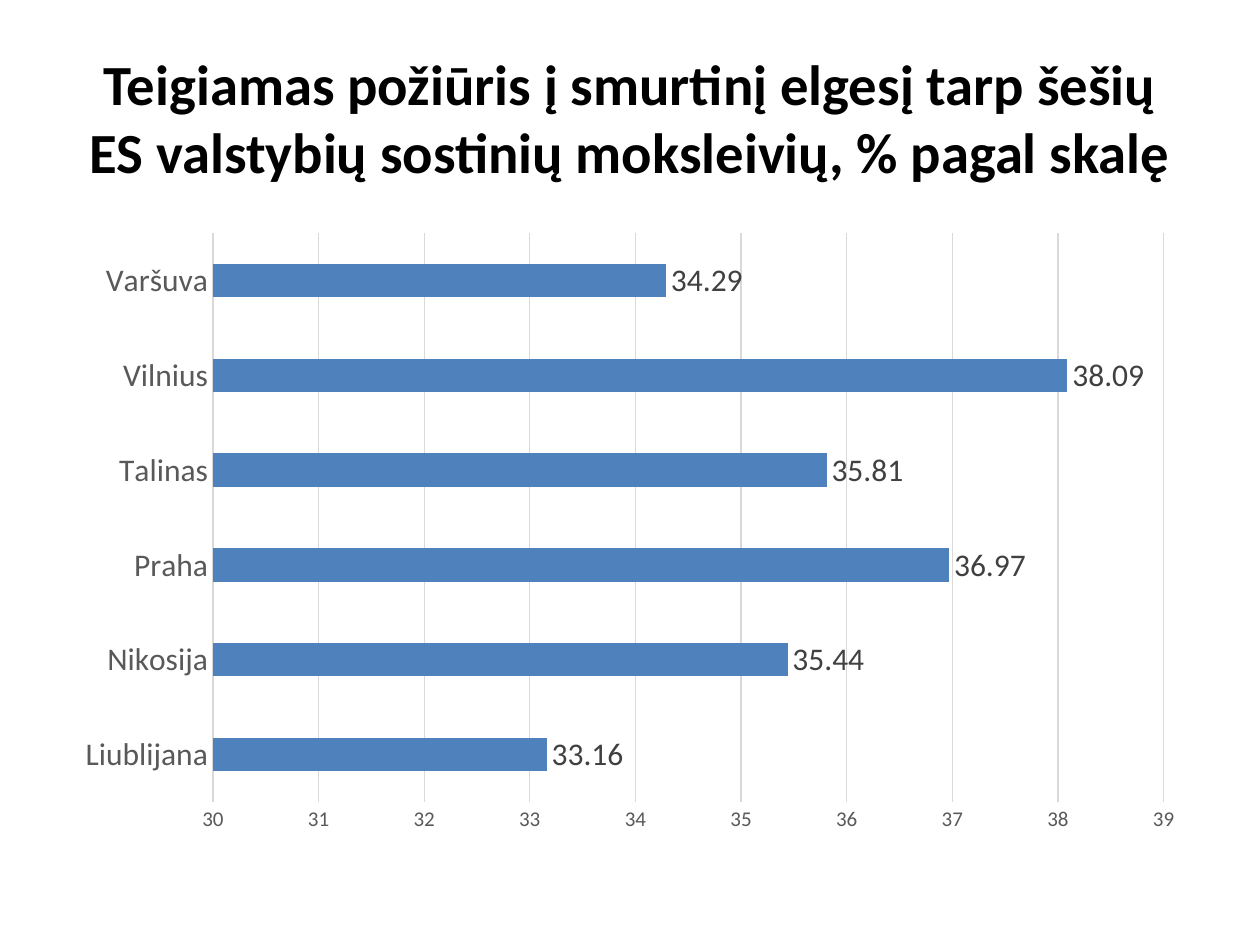
"""Builds a slide with a bar chart of attitudes to violence in six capitals."""
from pptx import Presentation
from pptx.chart.data import CategoryChartData as Data
from pptx.dml.color import RGBColor
from pptx.enum.chart import XL_CHART_TYPE as Kind
from pptx.enum.chart import XL_LABEL_POSITION as Place
from pptx.enum.chart import XL_TICK_MARK as Tick
from pptx.enum.text import MSO_ANCHOR as Anchor
from pptx.enum.text import MSO_AUTO_SIZE as Fit
from pptx.enum.text import PP_ALIGN as Align
from pptx.util import Cm, Pt

BLACK = RGBColor(0x00, 0x00, 0x00)
BLUE = RGBColor(0x4F, 0x81, 0xBD)
DARK = RGBColor(0x40, 0x40, 0x40)
GREY = RGBColor(0x59, 0x59, 0x59)
PALE = RGBColor(0xD9, 0xD9, 0xD9)

TITLE = ("Teigiamas požiūris į smurtinį elgesį tarp šešių "
         "ES valstybių sostinių moksleivių, % pagal skalę")
RATES = {
    "Liublijana": 33.16,
    "Nikosija": 35.44,
    "Praha": 36.97,
    "Talinas": 35.81,
    "Vilnius": 38.09,
    "Varšuva": 34.29,
}


class Deck:
    def __init__(self, face):
        self.face = face
        self.show = Presentation()
        self.show.slide_width, self.show.slide_height = Cm(25.4), Cm(19.05)
        self.slide = self.show.slides.add_slide(self.show.slide_layouts[5])

    def style(self, font, size, tint, bold=False):
        font.name, font.size, font.bold = self.face, Pt(size), bold
        font.color.rgb = tint

    def rule(self, line):
        line.color.rgb = PALE
        line.width = Pt(0.75)

    def title(self, text, box):
        shape = self.slide.shapes.title
        shape.left, shape.top, shape.width, shape.height = map(Cm, box)
        frame = shape.text_frame
        frame.text = text
        frame.auto_size = Fit.NONE
        frame.vertical_anchor = Anchor.MIDDLE
        para = frame.paragraphs[0]
        para.alignment = Align.CENTER
        self.style(para.font, 32.4, BLACK, True)

    def axis(self, axis, size):
        axis.major_tick_mark = axis.minor_tick_mark = Tick.NONE
        self.style(axis.tick_labels.font, size, GREY)

    def bars(self, rates, box):
        data = Data()
        data.categories = list(rates)
        data.add_series("Series 1", list(rates.values()))
        chart = self.slide.shapes.add_chart(
            Kind.BAR_CLUSTERED, *map(Cm, box), data).chart
        chart.has_title = chart.has_legend = False
        self.style(chart.font, 10, BLACK)

        names = chart.category_axis
        self.axis(names, 18)
        names.has_major_gridlines = False
        self.rule(names.format.line)

        scale = chart.value_axis
        self.axis(scale, 12)
        scale.minimum_scale, scale.maximum_scale = 30, 39
        scale.major_unit = 1
        scale.tick_labels.number_format = "General"
        scale.tick_labels.number_format_is_linked = False
        scale.format.line.fill.background()
        self.rule(scale.major_gridlines.format.line)

        plot = chart.plots[0]
        plot.gap_width = 182
        plot.vary_by_categories = False
        fill = plot.series[0].format.fill
        fill.solid()
        fill.fore_color.rgb = BLUE
        plot.has_data_labels = True
        labels = plot.data_labels
        labels.show_value = True
        labels.position = Place.OUTSIDE_END
        self.style(labels.font, 18, DARK)


def main():
    deck = Deck("Calibri")
    deck.title(TITLE, (1.27, 0.76, 22.86, 3.18))
    deck.bars(RATES, (1.27, 4.45, 22.86, 12.57))
    deck.show.save("out.pptx")


if __name__ == "__main__":
    main()
